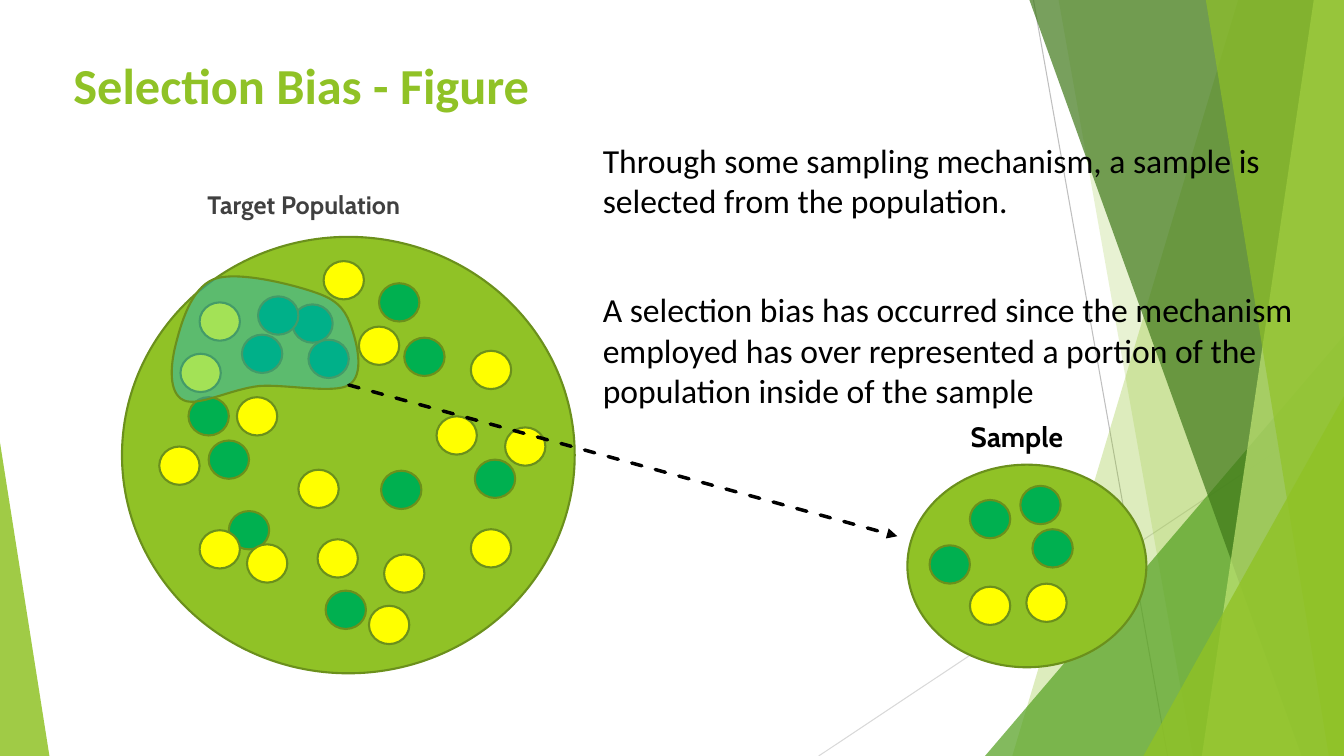
from lxml.etree import SubElement
from pptx import Presentation
from pptx.dml.color import RGBColor
from pptx.enum.dml import MSO_LINE
from pptx.enum.shapes import MSO_CONNECTOR, MSO_SHAPE
from pptx.enum.text import MSO_ANCHOR
from pptx.oxml.ns import qn
from pptx.util import Pt

PX = 9144  # 100 px to the inch
WIDTH, HEIGHT = 1333, 750
DOT_SIZE = (40, 38)

COLORS = {
    "lime": "90C226",
    "pale_lime": "C0E474",
    "leaf": "54A021",
    "forest": "3F7819",
    "outline": "6B901C",
    "green": "00B050",
    "yellow": "FFFF00",
    "blue": "00B0F0",
    "text": "404040",
    "black": "000000",
    "gray": "BFBFBF",
    "light_gray": "D9D9D9",
}

POPULATION_GREEN = [
    (306, 337), (290, 302), (378, 467), (401, 335), (240, 332), (207, 437),
    (323, 586), (256, 294), (376, 281), (227, 507), (187, 394), (471, 456),
]
POPULATION_YELLOW = [
    (179, 351), (321, 259), (198, 300), (158, 443), (245, 540), (433, 413),
    (381, 550), (467, 348), (467, 525), (296, 466), (315, 535), (501, 424),
    (198, 526), (356, 324), (235, 394), (366, 601),
]
SAMPLE_GREEN = [(962, 496), (1012, 482), (922, 541), (1024, 525)]
SAMPLE_YELLOW = [(1018, 579), (962, 582)]

SELECTION_BOX = (170, 274, 185, 124)
SELECTION_START = (174, 343)
SELECTION_CURVES = [
    ((179, 323), (189, 286), (212, 277)),
    ((236, 268), (293, 283), (315, 291)),
    ((338, 299), (344, 311), (349, 326)),
    ((354, 341), (362, 372), (346, 382)),
    ((331, 391), (284, 381), (257, 383)),
    ((229, 386), (196, 404), (182, 397)),
    ((167, 390), (169, 363), (174, 343)),
]


def rgb(color):
    return RGBColor.from_string(COLORS[color])


def paint(shape, color, opacity=100, outlined=False):
    shape.shadow.inherit = False
    shape.fill.solid()
    shape.fill.fore_color.rgb = rgb(color)
    if opacity < 100:
        color_element = shape.fill._xPr.find(qn("a:solidFill"))[0]
        SubElement(color_element, qn("a:alpha"), val=str(opacity * 1000))
    if outlined:
        shape.line.color.rgb = rgb("outline")
        shape.line.width = Pt(1.5)
    else:
        shape.line.fill.background()


def add_preset(slide, kind, left, top, width, height):
    return slide.shapes.add_shape(
        kind, left * PX, top * PX, width * PX, height * PX)


def add_ellipse(slide, left, top, width, height, color):
    ellipse = add_preset(slide, MSO_SHAPE.OVAL, left, top, width, height)
    paint(ellipse, color, outlined=True)


def add_dots(slide, positions, color):
    for left, top in positions:
        add_ellipse(slide, left, top, *DOT_SIZE, color)


def add_triangle(slide, left, top, width, apex, color, opacity):
    """Stand a triangle on the bottom edge; apex runs from 0 (left) to 1 (right)."""
    triangle = add_preset(slide, MSO_SHAPE.ISOSCELES_TRIANGLE,
                          left, top, width, HEIGHT - top)
    triangle.adjustments[0] = apex
    paint(triangle, color, opacity)


def add_polygon(slide, start, *others):
    builder = slide.shapes.build_freeform(*start, scale=PX)
    builder.add_line_segments(others, close=True)
    return builder.convert_to_shape()


def add_facet(slide, top_left, bottom_left, color, opacity):
    """Fill from a slanted left edge to the right edge of the slide."""
    facet = add_polygon(slide, (top_left, 0), (WIDTH, 0),
                        (WIDTH, HEIGHT), (bottom_left, HEIGHT))
    paint(facet, color, opacity)


def add_curved_outline(slide, box, start, curves):
    """Draw cubic Bézier curves, each given as two controls and an end, in a box."""
    left, top, width, height = box
    right, bottom = left + width, top + height
    shape = add_polygon(slide, (left, top), (right, top), (right, bottom), (left, bottom))
    outline = next(shape._element.iter(qn("a:path")))
    for segment in list(outline):
        outline.remove(segment)
    for tag, points in [("a:moveTo", [start])] + [("a:cubicBezTo", c) for c in curves]:
        segment = SubElement(outline, qn(tag))
        for x, y in points:
            SubElement(segment, qn("a:pt"), x=str(x - left), y=str(y - top))
    SubElement(outline, qn("a:close"))
    return shape


def add_line(slide, start, end, color, width, arrow=False):
    ends = [value * PX for value in (*start, *end)]
    connector = slide.shapes.add_connector(MSO_CONNECTOR.STRAIGHT, *ends)
    connector.line.color.rgb = rgb(color)
    connector.line.width = Pt(width)
    if arrow:
        connector.line.dash_style = MSO_LINE.DASH
        line_element = connector.line._get_or_add_ln()
        line_element.set("cap", "rnd")
        SubElement(line_element, qn("a:tailEnd"), type="triangle")
    SubElement(connector._element.spPr, qn("a:effectLst"))


def add_text(slide, box, *paragraphs, size, font, color="black", bold=False, gap=0):
    left, top, width, height = [value * PX for value in box]
    frame = slide.shapes.add_textbox(left, top, width, height).text_frame
    frame.word_wrap = True
    frame.vertical_anchor = MSO_ANCHOR.TOP
    for index, text in enumerate(paragraphs):
        paragraph = frame.add_paragraph() if index else frame.paragraphs[0]
        paragraph.space_before = Pt(gap if index else 0)
        run = paragraph.add_run()
        run.text = text
        run.font.size = Pt(size)
        run.font.name = font
        run.font.bold = bold
        run.font.color.rgb = rgb(color)


def add_backdrop(slide):
    add_line(slide, (1025, 0), (1158, HEIGHT), "gray", 0.75)
    add_line(slide, (WIDTH, 403), (812, HEIGHT), "light_gray", 0.75)
    add_facet(slide, 1228, 1004, "lime", 30)
    add_facet(slide, 1050, 1183, "lime", 20)
    add_triangle(slide, 977, 333, 356, 1, "leaf", 72)
    add_facet(slide, 1021, 1291, "forest", 70)
    add_facet(slide, 1303, 1192, "pale_lime", 70)
    add_facet(slide, 1196, 1318, "lime", 65)
    add_triangle(slide, 1134, 393, 199, 1, "lime", 80)
    add_triangle(slide, 0, 439, 49, 0, "lime", 85)


def add_population(slide):
    add_ellipse(slide, 121, 235, 449, 433, "lime")
    add_dots(slide, POPULATION_GREEN, "green")
    add_dots(slide, POPULATION_YELLOW, "yellow")
    selection = add_curved_outline(slide, SELECTION_BOX, SELECTION_START, SELECTION_CURVES)
    paint(selection, "blue", 36, outlined=True)


def add_sample(slide):
    add_ellipse(slide, 900, 461, 237, 201, "lime")
    add_dots(slide, SAMPLE_GREEN, "green")
    add_dots(slide, SAMPLE_YELLOW, "yellow")


def main():
    presentation = Presentation()
    presentation.slide_width = WIDTH * PX
    presentation.slide_height = HEIGHT * PX
    slide = presentation.slides.add_slide(presentation.slide_layouts[6])

    add_backdrop(slide)
    add_text(slide, (63, 49, 1150, 96), "Selection Bias - Figure",
             size=36, font="Calibri", color="lime", bold=True)
    add_text(slide, (196, 183, 270, 56), "Target Population",
             size=18, font="Cabin", color="text", bold=True)
    add_population(slide)
    add_sample(slide)
    add_line(slide, (346, 382), (890, 532), "black", 2.5, arrow=True)
    add_text(slide, (953, 411, 114, 56), "Sample", size=20, font="Cabin", bold=True)
    add_text(slide, (588, 134, 735, 282),
             "Through some sampling mechanism, a sample is selected from the population.",
             "A selection bias has occurred since the mechanism employed has over "
             "represented a portion of the population inside of the sample",
             size=24, font="Calibri", gap=49)
    presentation.save("out.pptx")


if __name__ == "__main__":
    main()
